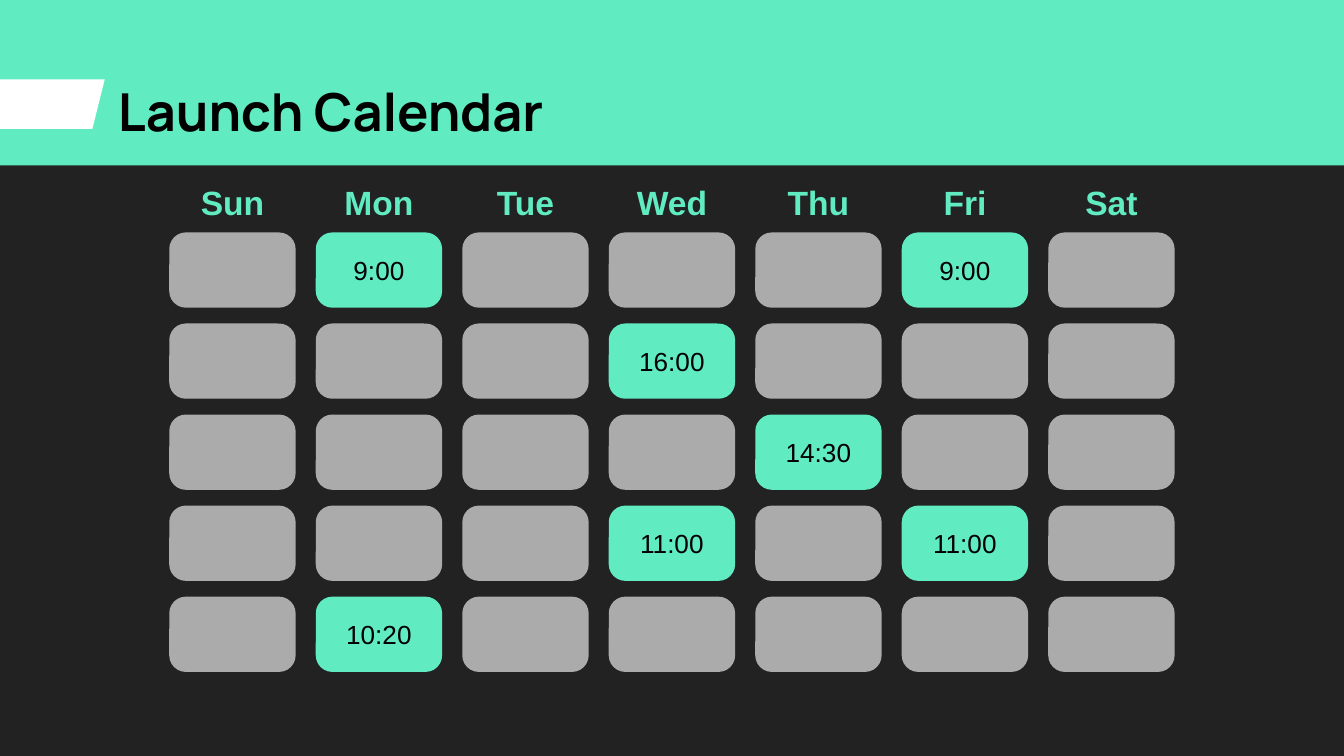
from dataclasses import dataclass

from pptx import Presentation
from pptx.dml.color import RGBColor
from pptx.enum.shapes import MSO_SHAPE
from pptx.enum.text import MSO_ANCHOR, PP_ALIGN
from pptx.shapes.autoshape import Shape
from pptx.slide import Slide
from pptx.util import Inches, Pt

MINT = "61EBC1"
CHARCOAL = "222222"
GREY = "ABABAB"
WHITE = "FFFFFF"
BLACK = "000000"

PAGE_WIDTH = 10
PAGE_HEIGHT = PAGE_WIDTH * 9 / 16
BODY_TOP = 1.23

DAYS = ("Sun", "Mon", "Tue", "Wed", "Thu", "Fri", "Sat")
WEEKS = 5
LAUNCHES = {
    (0, "Mon"): "9:00",
    (0, "Fri"): "9:00",
    (1, "Wed"): "16:00",
    (2, "Thu"): "14:30",
    (3, "Wed"): "11:00",
    (3, "Fri"): "11:00",
    (4, "Mon"): "10:20",
}

CELL_WIDTH, CELL_HEIGHT = 0.94, 0.56
GRID_LEFT, GRID_RIGHT = 1.26, 8.74
GRID_TOP, GRID_BOTTOM = 1.73, 5.0
COLUMN_STEP = (GRID_RIGHT - GRID_LEFT - CELL_WIDTH) / (len(DAYS) - 1)
ROW_STEP = (GRID_BOTTOM - GRID_TOP - CELL_HEIGHT) / (WEEKS - 1)
LABEL_TOP, LABEL_WIDTH, LABEL_HEIGHT = 1.36, 0.82, 0.29


@dataclass(frozen=True)
class Area:
    """Position and size in inches."""
    left: float
    top: float
    width: float
    height: float

    def lengths(self) -> tuple[Inches, ...]:
        return tuple(Inches(value) for value in (self.left, self.top, self.width, self.height))


@dataclass(frozen=True)
class TextStyle:
    size: int
    color: str
    font: str = "Arial"
    bold: bool = False
    align: PP_ALIGN = PP_ALIGN.CENTER
    anchor: MSO_ANCHOR = MSO_ANCHOR.MIDDLE


TITLE = TextStyle(28, BLACK, "Manrope", True, PP_ALIGN.LEFT, MSO_ANCHOR.TOP)
DAY_LABEL = TextStyle(18, MINT, bold=True)
LAUNCH_TIME = TextStyle(14, BLACK)


def rgb(color: str) -> RGBColor:
    return RGBColor.from_string(color)


def write_text(box: Shape, text: str, style: TextStyle) -> None:
    frame = box.text_frame
    frame.text = text
    frame.word_wrap = True
    frame.vertical_anchor = style.anchor
    frame.margin_left = frame.margin_right = Inches(0.1)
    frame.margin_top = frame.margin_bottom = Inches(0.1)
    para = frame.paragraphs[0]
    para.alignment = style.align
    font = para.runs[0].font
    font.name = style.font
    font.size = Pt(style.size)
    font.bold = style.bold
    font.color.rgb = rgb(style.color)


def add_text(page: Slide, area: Area, text: str, style: TextStyle) -> None:
    write_text(page.shapes.add_textbox(*area.lengths()), text, style)


def add_block(page: Slide, kind: MSO_SHAPE, area: Area, color: str) -> Shape:
    """Add a flat filled shape without outline or shadow."""
    block = page.shapes.add_shape(kind, *area.lengths())
    block.shadow.inherit = False
    block.fill.solid()
    block.fill.fore_color.rgb = rgb(color)
    block.line.fill.background()
    return block


def add_cell(page: Slide, area: Area, time: str | None) -> None:
    """Add a calendar day, highlighted when it has a launch time."""
    cell = add_block(page, MSO_SHAPE.ROUNDED_RECTANGLE, area, MINT if time else GREY)
    cell.adjustments[0] = 0.22
    if time:
        write_text(cell, time, LAUNCH_TIME)


def add_calendar(page: Slide) -> None:
    label_inset = (CELL_WIDTH - LABEL_WIDTH) / 2
    for column, day in enumerate(DAYS):
        left = GRID_LEFT + column * COLUMN_STEP
        label_area = Area(left + label_inset, LABEL_TOP, LABEL_WIDTH, LABEL_HEIGHT)
        add_text(page, label_area, day, DAY_LABEL)
        for week in range(WEEKS):
            area = Area(left, GRID_TOP + week * ROW_STEP, CELL_WIDTH, CELL_HEIGHT)
            add_cell(page, area, LAUNCHES.get((week, day)))


def main() -> None:
    deck = Presentation()
    deck.slide_width = Inches(PAGE_WIDTH)
    deck.slide_height = Inches(PAGE_HEIGHT)
    page = deck.slides.add_slide(deck.slide_layouts[6])
    page.background.fill.solid()
    page.background.fill.fore_color.rgb = rgb(MINT)

    add_block(page, MSO_SHAPE.PARALLELOGRAM, Area(-0.15, 0.59, 0.93, 0.37), WHITE)
    body = Area(0, BODY_TOP, PAGE_WIDTH, PAGE_HEIGHT - BODY_TOP)
    add_block(page, MSO_SHAPE.RECTANGLE, body, CHARCOAL)
    add_text(page, Area(0.78, 0.49, 8.44, 0.63), "Launch Calendar", TITLE)
    add_calendar(page)

    deck.save("out.pptx")


if __name__ == "__main__":
    main()
